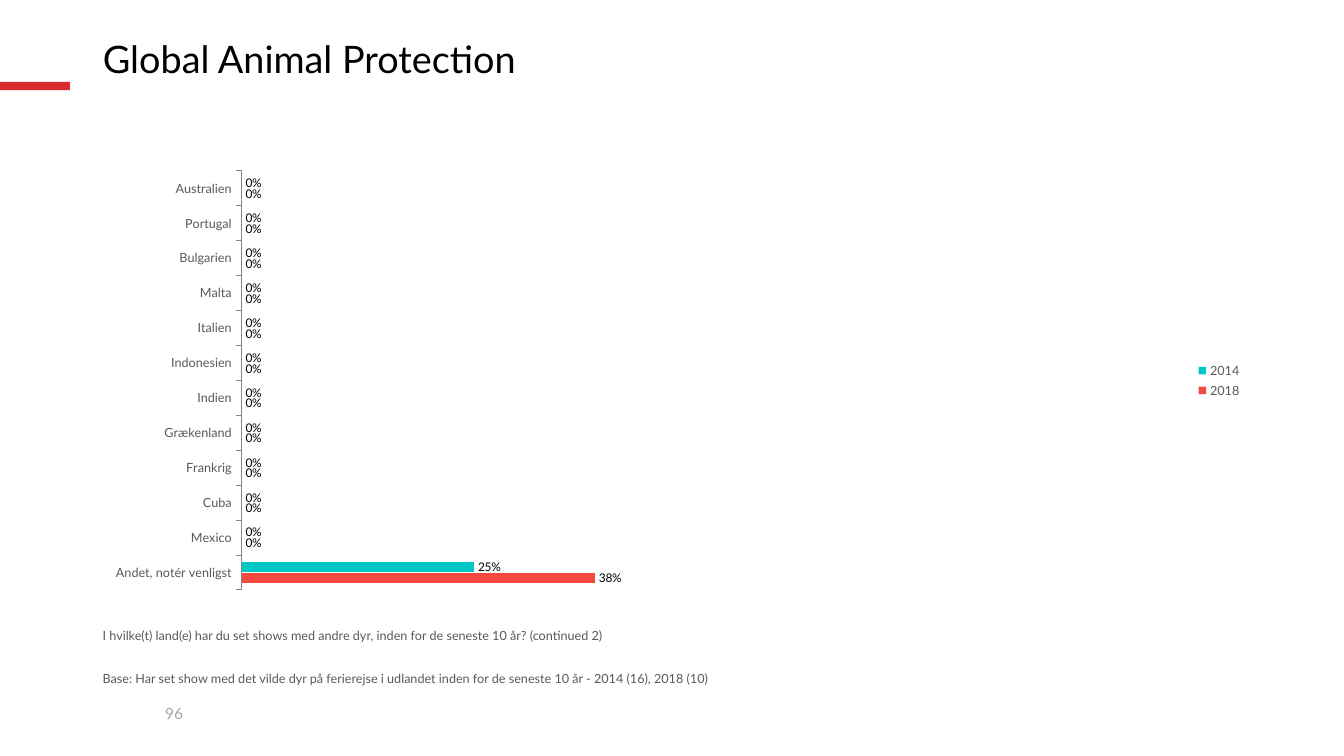
import pptx
import pptx.chart.data
import pptx.dml.color
import pptx.enum.chart
import pptx.enum.shapes
import pptx.enum.text
import pptx.util

Pt = pptx.util.Pt

LEFT, WIDTH = 66.24, 828
GREY = "595959"
COUNTRIES = ["Andet, notér venligst", "Mexico", "Cuba", "Frankrig", "Grækenland", "Indien",
             "Indonesien", "Italien", "Malta", "Bulgarien", "Portugal", "Australien"]
# Year, share answering "Andet", bar colour; every named country has 0 %.
YEARS = [("2018", 0.38, "F3493E"), ("2014", 0.25, "02C8C5")]


def color(value):
    return pptx.dml.color.RGBColor.from_string(value)


class SlideBuilder:
    font_name = "Lato"

    def __init__(self, deck):
        self.slide = deck.slides.add_slide(deck.slide_layouts[5])

    def style(self, font, size, fill):
        font.name = self.font_name
        font.size = Pt(size)
        font.color.rgb = color(fill)

    def add_span(self, para, text, size, fill):
        span = para.add_run()
        span.text = text
        self.style(span.font, size, fill)

    def bar(self, left, top, width, height, fill):
        shape = self.slide.shapes.add_shape(
            pptx.enum.shapes.MSO_SHAPE.RECTANGLE, Pt(left), Pt(top), Pt(width), Pt(height))
        shape.shadow.inherit = False
        shape.fill.solid()
        shape.fill.fore_color.rgb = color(fill)
        shape.line.fill.background()

    def title(self, text, left, top, width, height):
        box = self.slide.shapes.title
        box.left, box.top, box.width, box.height = Pt(left), Pt(top), Pt(width), Pt(height)
        frame = box.text_frame
        frame.word_wrap = True
        frame.auto_size = pptx.enum.text.MSO_AUTO_SIZE.NONE
        frame.vertical_anchor = pptx.enum.text.MSO_ANCHOR.MIDDLE
        para = frame.paragraphs[0]
        para.alignment = pptx.enum.text.PP_ALIGN.LEFT
        para.line_spacing = 0.9
        self.add_span(para, text, 27, "000000")

    def text(self, text, left, top, width, height, size, fill):
        box = self.slide.shapes.add_textbox(Pt(left), Pt(top), Pt(width), Pt(height))
        box.text_frame.word_wrap = True
        self.add_span(box.text_frame.paragraphs[0], text, size, fill)

    def bar_chart(self, categories, series, left, top, width, height):
        data = pptx.chart.data.CategoryChartData(number_format="0%")
        data.categories = categories
        for name, share, _ in series:
            data.add_series(name, [share] + [0] * (len(categories) - 1))
        chart = self.slide.shapes.add_chart(
            pptx.enum.chart.XL_CHART_TYPE.BAR_CLUSTERED,
            Pt(left), Pt(top), Pt(width), Pt(height), data).chart
        self.style(chart.font, 18, "000000")
        chart.has_title = False
        chart.has_legend = True
        chart.legend.position = pptx.enum.chart.XL_LEGEND_POSITION.RIGHT
        chart.legend.include_in_layout = False
        self.style(chart.legend.font, 9, GREY)

        names = chart.category_axis
        names.tick_label_position = pptx.enum.chart.XL_TICK_LABEL_POSITION.LOW
        names.major_tick_mark = pptx.enum.chart.XL_TICK_MARK.OUTSIDE
        names.format.line.color.rgb = color("868686")
        self.style(names.tick_labels.font, 9, GREY)
        values = chart.value_axis
        values.minimum_scale, values.maximum_scale, values.major_unit = 0, 1, 0.1
        values.has_major_gridlines = False
        values.visible = False

        plot = chart.plots[0]
        plot.vary_by_categories = False
        plot.gap_width, plot.overlap = 150, -10
        for bars, (_, _, fill) in zip(plot.series, series):
            bars.format.fill.solid()
            bars.format.fill.fore_color.rgb = color(fill)
            labels = bars.data_labels
            labels.show_value = True
            labels.position = pptx.enum.chart.XL_LABEL_POSITION.OUTSIDE_END
            labels.number_format = "0%"
            labels.number_format_is_linked = False
            self.style(labels.font, 8.5, "000000")


def main():
    deck = pptx.Presentation()
    deck.slide_width, deck.slide_height = Pt(960), Pt(540)
    page = SlideBuilder(deck)
    page.bar(0, 58.5, 50, 6, "DA2C2D")
    page.text("96", 110.88, 499.68, 48.96, 20.88, 11, "A6A6A6")
    page.title("Global Animal Protection", LEFT, 25.2, WIDTH, 36.72)
    page.text("I hvilke(t) land(e) har du set shows med andre dyr, inden for de seneste 10 år? "
              "(continued 2)", LEFT, 444.96, WIDTH, 30.96, 9, GREY)
    page.bar_chart(COUNTRIES, YEARS, LEFT, 115.92, WIDTH, 311.76)
    page.text("Base: Har set show med det vilde dyr på ferierejse i udlandet inden for de seneste "
              "10 år - 2014 (16), 2018 (10)", LEFT, 475.92, WIDTH, 20.16, 9, GREY)
    deck.save("out.pptx")


if __name__ == "__main__":
    main()
